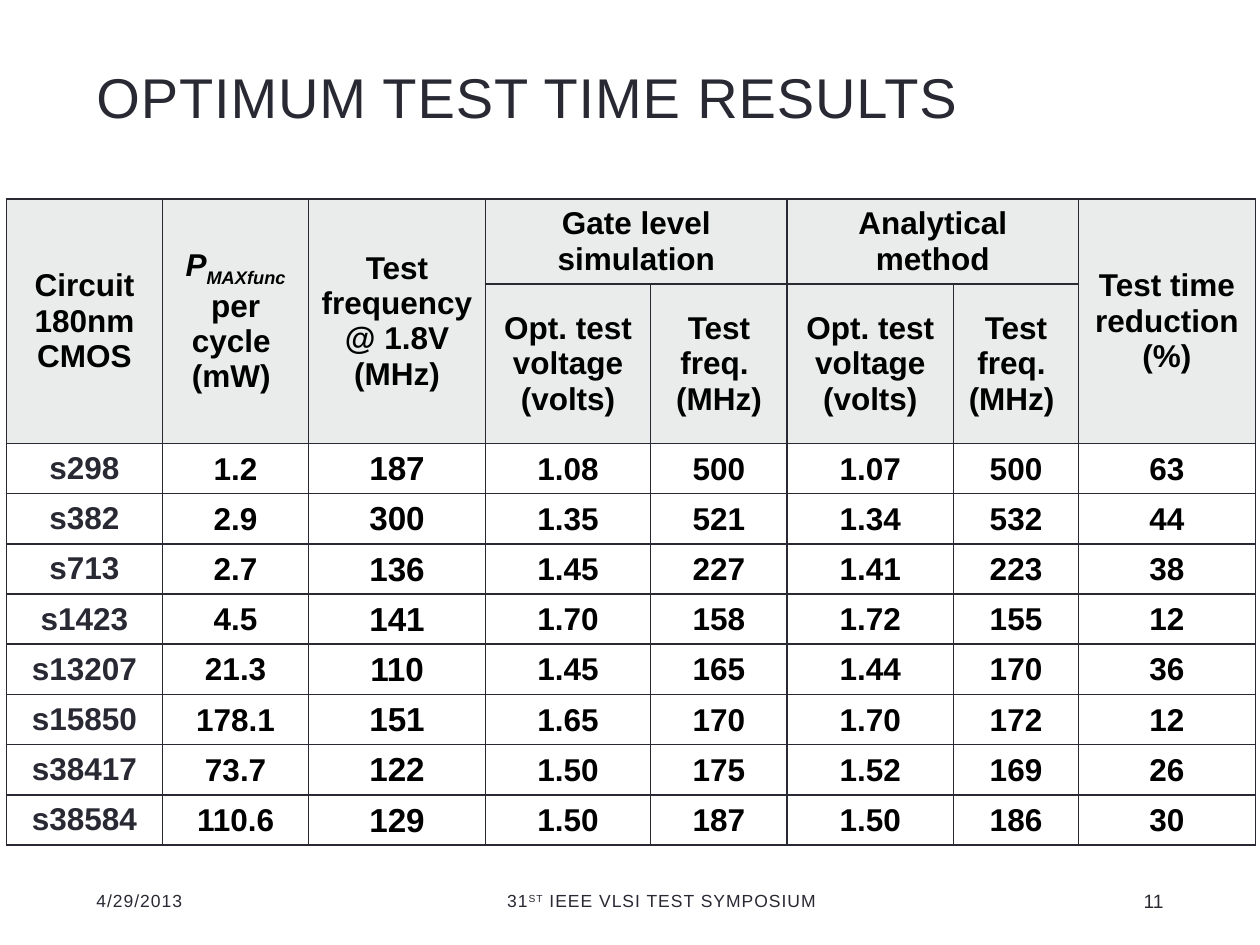
from dataclasses import dataclass

from lxml import etree
from pptx import Presentation
from pptx.dml.color import RGBColor
from pptx.enum import text as t
from pptx.oxml import ns
from pptx.util import Pt

INK = RGBColor(0x29, 0x29, 0x34)
BLACK = RGBColor(0x00, 0x00, 0x00)
HEADER_FILL = RGBColor(0xE9, 0xEC, 0xEB)
FONT = "Arial"
LEFT, CENTER, RIGHT = t.PP_ALIGN.LEFT, t.PP_ALIGN.CENTER, t.PP_ALIGN.RIGHT
MIDDLE, BOTTOM = t.MSO_ANCHOR.MIDDLE, t.MSO_ANCHOR.BOTTOM


@dataclass(frozen=True)
class Run:
    text: str
    size: float = 18
    color: RGBColor = BLACK
    bold: bool = False
    italic: bool = False
    baseline: int = 0
    spacing: int = 0


@dataclass(frozen=True)
class Label:
    left: float
    top: float
    width: float
    height: float
    runs: tuple[Run, ...]
    align: t.PP_ALIGN = LEFT
    anchor: t.MSO_ANCHOR = MIDDLE


@dataclass(frozen=True)
class Header:
    row: int
    column: int
    paragraphs: tuple[tuple[Run, ...], ...]
    row_span: int = 1
    column_span: int = 1


def heading(*lines: str) -> tuple[tuple[Run, ...], ...]:
    return tuple((Run(line, bold=True),) for line in lines)


def footer(text: str, baseline: int = 0) -> Run:
    return Run(text, 10, INK, baseline=baseline, spacing=60)


LABELS = (
    Label(48, 21.6, 624, 56, (Run("OPTIMUM TEST TIME RESULTS", 32, INK, spacing=50),), anchor=BOTTOM),
    Label(48, 500.4, 120, 28.8, (footer("4/29/2013"),)),
    Label(264, 500.4, 228, 28.8,
          (footer("31"), footer("ST", 30000), footer(" IEEE VLSI TEST SYMPOSIUM")), CENTER),
    Label(594, 500.4, 78, 28.8, (Run("11", 11, INK),), RIGHT),
)

POWER = (
    (
        Run("P", bold=True, italic=True),
        Run("MAXfunc ", bold=True, italic=True, baseline=-25000),
        Run("per cycle ", bold=True),
    ),
    (Run("(mW) ", bold=True),),
)
VOLTAGE = heading("Opt. test voltage (volts)")

HEADERS = (
    Header(0, 0, heading("Circuit 180nm CMOS"), row_span=2),
    Header(0, 1, POWER, row_span=2),
    Header(0, 2, heading("Test frequency", "@ 1.8V", "(MHz)"), row_span=2),
    Header(0, 3, heading("Gate level simulation"), column_span=2),
    Header(0, 5, heading("Analytical method"), column_span=2),
    Header(0, 7, heading("Test time reduction (%)"), row_span=2),
    Header(1, 3, VOLTAGE),
    Header(1, 4, heading("Test freq. ", "(MHz)")),
    Header(1, 5, VOLTAGE),
    Header(1, 6, heading("Test freq. ", "(MHz) ")),
)
HEADER_ROWS = 2

RESULTS = (
    ("s298", "1.2", "187", "1.08", "500", "1.07", "500", "63"),
    ("s382", "2.9", "300", "1.35", "521", "1.34", "532", "44"),
    ("s713", "2.7", "136", "1.45", "227", "1.41", "223", "38"),
    ("s1423", "4.5", "141", "1.70", "158", "1.72", "155", "12"),
    ("s13207", "21.3", "110", "1.45", "165", "1.44", "170", "36"),
    ("s15850", "178.1", "151", "1.65", "170", "1.70", "172", "12"),
    ("s38417", "73.7", "122", "1.50", "175", "1.52", "169", "26"),
    ("s38584", "110.6", "129", "1.50", "187", "1.50", "186", "30"),
)
COLUMN_WIDTHS = (89.3, 83.5, 101, 94.5, 78, 95, 71.5, 101)
ROW_HEIGHTS = (48.6, 91) + (28.7,) * len(RESULTS)
CIRCUIT_COLUMN, FREQUENCY_COLUMN = 0, 2


def add_run(paragraph, run: Run) -> None:
    text_run = paragraph.add_run()
    text_run.text = run.text
    font = text_run.font
    font.name = FONT
    font.size = Pt(run.size)
    font.bold = run.bold
    font.italic = run.italic
    font.color.rgb = run.color
    properties = text_run._r.get_or_add_rPr()
    if run.baseline:
        properties.set("baseline", str(run.baseline))
    if run.spacing:
        properties.set("spc", str(run.spacing))


def write(frame, paragraphs: tuple[tuple[Run, ...], ...], align: t.PP_ALIGN) -> None:
    for index, runs in enumerate(paragraphs):
        paragraph = frame.add_paragraph() if index else frame.paragraphs[0]
        paragraph.alignment = align
        for run in runs:
            add_run(paragraph, run)


def add_label(slide, label: Label) -> None:
    shape = slide.shapes.add_textbox(Pt(label.left), Pt(label.top), Pt(label.width), Pt(label.height))
    frame = shape.text_frame
    frame.word_wrap = True
    frame.vertical_anchor = label.anchor
    write(frame, (label.runs,), label.align)


def add_borders(cell) -> None:
    properties = cell._tc.get_or_add_tcPr()
    for side in ("a:lnL", "a:lnR", "a:lnT", "a:lnB"):
        line = etree.SubElement(properties, ns.qn(side), w=str(Pt(1)))
        fill = etree.SubElement(line, ns.qn("a:solidFill"))
        etree.SubElement(fill, ns.qn("a:srgbClr"), val=str(INK))


def fill_header(table, header: Header) -> None:
    cell = table.cell(header.row, header.column)
    if header.row_span > 1 or header.column_span > 1:
        cell.merge(table.cell(header.row + header.row_span - 1, header.column + header.column_span - 1))
    write(cell.text_frame, header.paragraphs, CENTER)


def fill_result(cell, value: str, column: int) -> None:
    if column != CIRCUIT_COLUMN:
        cell.margin_left = cell.margin_right = cell.margin_top = Pt(0.7)
        cell.margin_bottom = Pt(0)
    size = 19 if column == FREQUENCY_COLUMN else 18
    color = INK if column == CIRCUIT_COLUMN else BLACK
    write(cell.text_frame, ((Run(value, size, color, bold=True),),), CENTER)


def add_results_table(slide) -> None:
    frame = slide.shapes.add_table(len(ROW_HEIGHTS), len(COLUMN_WIDTHS), Pt(3.6), Pt(113.8),
                                   Pt(sum(COLUMN_WIDTHS)), Pt(sum(ROW_HEIGHTS)))
    table = frame.table
    table.first_row = table.horz_banding = False
    for column, width in zip(table.columns, COLUMN_WIDTHS):
        column.width = Pt(width)
    for index, (row, height) in enumerate(zip(table.rows, ROW_HEIGHTS)):
        row.height = Pt(height)
        for cell in row.cells:
            cell.vertical_anchor = MIDDLE
            add_borders(cell)
            if index < HEADER_ROWS:
                cell.fill.solid()
                cell.fill.fore_color.rgb = HEADER_FILL
            else:
                cell.fill.background()
    for header in HEADERS:
        fill_header(table, header)
    for row_index, values in enumerate(RESULTS, HEADER_ROWS):
        for column_index, value in enumerate(values):
            fill_result(table.cell(row_index, column_index), value, column_index)


def main() -> None:
    presentation = Presentation()
    presentation.slide_width, presentation.slide_height = Pt(720), Pt(540)
    slide = presentation.slides.add_slide(presentation.slide_layouts[6])
    add_results_table(slide)
    for label in LABELS:
        add_label(slide, label)
    presentation.save("out.pptx")


if __name__ == "__main__":
    main()
